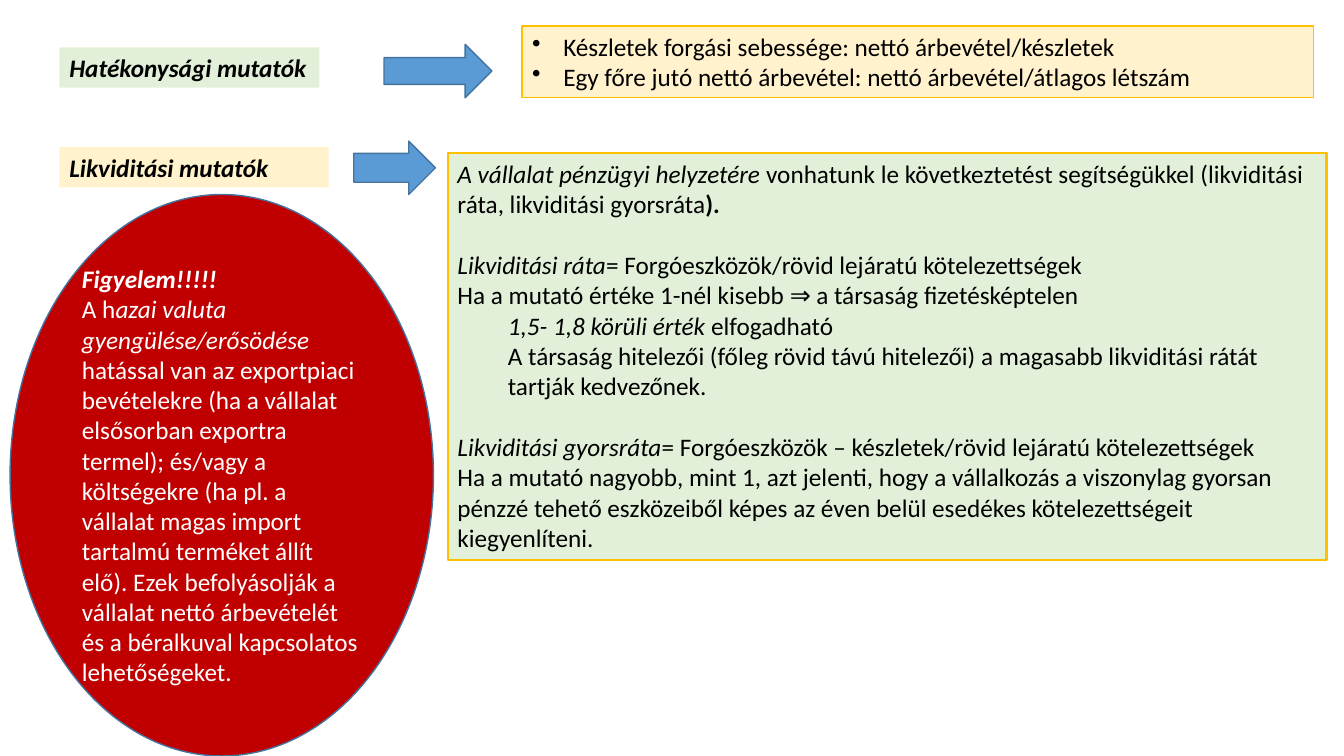
import pptx
import pptx.dml.color
import pptx.enum.shapes
import pptx.enum.text
import pptx.oxml.ns
import pptx.util
from lxml import etree

COLORS = {
    "green": "E2F0D9", "cream": "FFF2CC", "gold": "FFC000", "blue": "5B9BD5",
    "steel": "43739E", "red": "C00000", "black": "000000", "white": "FFFFFF",
}
SHAPES = pptx.enum.shapes.MSO_SHAPE
ANCHORS = pptx.enum.text.MSO_ANCHOR


def rgb(name):
    """Return the named colour."""
    return pptx.dml.color.RGBColor.from_string(COLORS[name])


def write_paragraph(paragraph, runs, font="Calibri", size=18, color="black",
                    before=0, margin=0, hanging=0, bullet=None):
    """Write (text, style) runs, where style may hold b for bold and i for italic."""
    paragraph.alignment = pptx.enum.text.PP_ALIGN.LEFT
    paragraph.space_before = pptx.util.Pt(before)
    properties = paragraph._p.get_or_add_pPr()
    properties.set("marL", str(pptx.util.Inches(margin)))
    properties.set("indent", str(-pptx.util.Inches(hanging)))
    if bullet:
        mark = etree.SubElement(properties, pptx.oxml.ns.qn("a:buChar"))
        mark.set("char", bullet)
    for text, style in runs:
        run = paragraph.add_run()
        run.text = text
        run.font.name = font
        run.font.size = pptx.util.Pt(size)
        run.font.bold = "b" in style
        run.font.italic = "i" in style
        run.font.color.rgb = rgb(color)


class SlideBuilder:
    """Places styled shapes on a slide grid of 40 columns and 30 rows."""

    def __init__(self, presentation):
        """Add a blank slide and measure its grid."""
        self.slide = presentation.slides.add_slide(presentation.slide_layouts[6])
        self.column = presentation.slide_width / 40
        self.row = presentation.slide_height / 30

    def shape(self, kind, place, fill, line=None, weight=1):
        """Add a filled shape at (left, top, width, height) in grid units."""
        left, top, width, height = place
        shape = self.slide.shapes.add_shape(
            kind, round(left * self.column), round(top * self.row),
            round(width * self.column), round(height * self.row))
        shape.shadow.inherit = False
        shape.fill.solid()
        shape.fill.fore_color.rgb = rgb(fill)
        if line:
            shape.line.color.rgb = rgb(line)
            shape.line.width = pptx.util.Pt(weight)
        else:
            shape.line.fill.background()
        return shape

    def panel(self, place, fill, paragraphs, kind=SHAPES.RECTANGLE, line=None,
              weight=1, color="black", anchor=ANCHORS.TOP, wrap=True):
        """Add a shape holding (runs, format) paragraphs."""
        frame = self.shape(kind, place, fill, line, weight).text_frame
        frame.word_wrap = wrap
        frame.vertical_anchor = anchor
        for index, (runs, options) in enumerate(paragraphs):
            paragraph = frame.add_paragraph() if index else frame.paragraphs[0]
            write_paragraph(paragraph, runs, color=color, **options)

    def label(self, place, fill, text, wrap=True):
        """Add a bold italic heading label."""
        self.panel(place, fill, [([(text, "bi")], {})], wrap=wrap)

    def arrow(self, place, shaft=0.5):
        """Add a block arrow pointing right."""
        arrow = self.shape(SHAPES.RIGHT_ARROW, place, "blue", "steel")
        arrow.adjustments[0] = shaft


def main():
    """Build and save the slide."""
    presentation = pptx.Presentation()
    presentation.slide_width = pptx.util.Inches(13.33)
    presentation.slide_height = pptx.util.Inches(7.5)
    builder = SlideBuilder(presentation)
    bullet = {"margin": 0.31, "hanging": 0.31, "bullet": "•"}
    indented = {"margin": 0.5}
    new_section = {"before": 22}

    builder.label((1.77, 1.88, 7.74, 1.6), "green", "Hatékonysági mutatók", wrap=False)
    builder.panel((15.54, 1.04, 23.55, 2.84), "cream", [
        ([("Készletek forgási sebessége: nettó árbevétel/készletek", "")], bullet),
        ([("Egy főre jutó nettó árbevétel: nettó árbevétel/átlagos létszám", "")], bullet),
    ], line="gold")
    builder.arrow((11.43, 1.76, 3.21, 2.12))

    builder.label((1.77, 5.84, 8.01, 1.6), "cream", "Likviditási mutatók")
    builder.arrow((10.53, 5.6, 2.43, 2.12), shaft=0.54)
    builder.panel((13.32, 6.08, 26.16, 16.16), "green", [
        ([("A vállalat pénzügyi helyzetére ", "i"),
          ("vonhatunk le következtetést segítségükkel (likviditási ráta, "
           "likviditási gyorsráta", ""), (").", "b")], {}),
        ([("Likviditási ráta", "i"),
          ("= Forgóeszközök/rövid lejáratú kötelezettségek", "")], new_section),
        ([("Ha a mutató értéke 1-nél kisebb ⇒ a társaság fizetésképtelen", "")], {}),
        ([("1,5- 1,8 körüli érték ", "i"), ("elfogadható", "")], indented),
        ([("A társaság hitelezői (főleg rövid távú hitelezői) a magasabb "
           "likviditási rátát tartják kedvezőnek.", "")], indented),
        ([("Likviditási gyorsráta", "i"),
          ("= Forgóeszközök – készletek/rövid lejáratú kötelezettségek", "")], new_section),
        ([("Ha a mutató nagyobb, mint 1, azt jelenti, hogy a vállalkozás a "
           "viszonylag gyorsan pénzzé tehető eszközeiből képes az éven belül "
           "esedékes kötelezettségeit kiegyenlíteni.", "")], {}),
    ], line="gold", weight=1.5)

    builder.panel((0.3, 7.72, 12.6, 22.28), "red", [
        ([("Figyelem!!!!!", "bi")], {}),
        ([("A h", ""), ("azai valuta gyengülése/erősödése", "i"),
          (" hatással van az exportpiaci bevételekre (ha a vállalat elsősorban "
           "exportra termel); és/vagy a költségekre (ha pl. a vállalat magas "
           "import tartalmú terméket állít elő). Ezek befolyásolják a vállalat "
           "nettó árbevételét és a béralkuval kapcsolatos lehetőségeket.", "")], {}),
    ], kind=SHAPES.OVAL, line="steel", color="white", anchor=ANCHORS.MIDDLE)

    presentation.save("out.pptx")


if __name__ == "__main__":
    main()
